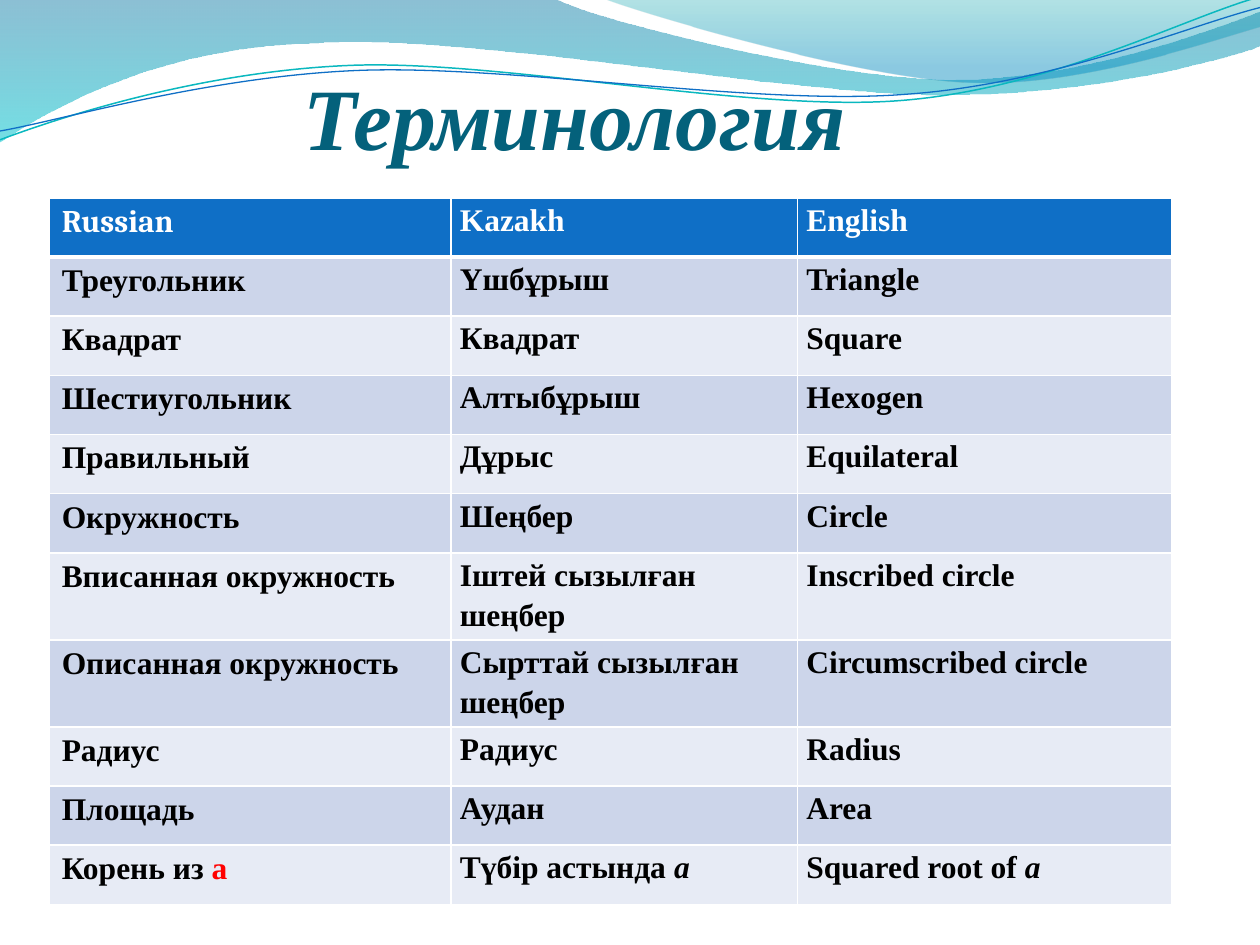
from dataclasses import dataclass

from lxml import etree
from pptx import Presentation
from pptx.dml.color import RGBColor
from pptx.enum import text
from pptx.oxml.ns import qn
from pptx.util import Inches, Pt


@dataclass(frozen=True)
class Theme:
    font: str = "Times New Roman"
    heading_font: str = "Cambria"
    title_size: int = 50
    table_size: int = 18
    title: str = "04617B"
    header: str = "0F6FC6"
    bands: tuple = ("CCD5EA", "E7EBF5")
    white: str = "FFFFFF"
    black: str = "000000"
    red: str = "FF0000"
    teal_line: str = "0AB8BF"
    # Gradient stops: position, colour, opacity in percent
    wide_wave: tuple = ((0, "0074A1", 45), (1, "00C6CF", 55))
    right_wave: tuple = ((0, "00A1A9", 30), (0.8, "008BBF", 45))


THEME = Theme()

# Each path is a start point followed by lines (2 numbers) and Bézier curves (6).
WIDE_WAVE = [
    (0, 0), (4.4, -0.01), (4.76, 0.17, 6.64, 0.63, 7.58, 0.63),
    (8.53, 0.63, 9.58, 0.26, 10, 0.09), (10.01, 0.36),
    (9.83, 0.44, 8.7, 0.76, 7.46, 0.75), (6.22, 0.75, 3.82, 0.28, 2.57, 0.34),
    (1.29, 0.36, 0.46, 0.83, -0.01, 1.13), (0, 0),
]
RIGHT_WAVE = [
    (4.79, -0.01), (5.09, 0.11, 6.82, 0.62, 7.69, 0.65),
    (8.56, 0.69, 9.61, 0.32, 10, 0.21), (10, 0), (4.79, -0.01),
]
TEAL_CURVE = [
    (0, 1.11), (0.48, 0.93, 1.58, 0.57, 2.77, 0.52),
    (3.95, 0.47, 5.93, 0.89, 7.13, 0.8), (8.33, 0.71, 9.38, 0.15, 9.98, -0.02),
]
BLUE_CURVE = [
    (0, 1.04), (0.47, 0.96, 1.64, 0.61, 2.83, 0.56),
    (4.03, 0.51, 5.97, 0.84, 7.17, 0.75), (8.36, 0.67, 9.41, 0.21, 10, 0.06),
]

COLUMN_WIDTHS = (3.19, 2.75, 2.97)
ROW_HEIGHT = 0.47
# A nested tuple holds a phrase and the symbol that ends it.
TERMS = [
    ("Russian", "Kazakh", "English"),
    ("Треугольник", "Үшбұрыш", "Triangle"),
    ("Квадрат", "Квадрат", "Square"),
    ("Шестиугольник", "Алтыбұрыш", "Hexogen"),
    ("Правильный", "Дұрыс", "Equilateral"),
    ("Окружность", "Шеңбер", "Circle"),
    ("Вписанная окружность", "Іштей сызылған шеңбер", "Inscribed circle"),
    ("Описанная окружность", "Сырттай сызылған шеңбер", "Circumscribed circle"),
    ("Радиус", "Радиус", "Radius"),
    ("Площадь", "Аудан", "Area"),
    (("Корень из ", "а"), ("Түбір астында ", "а"), ("Squared root of ", "a")),
]


def rgb(value):
    return RGBColor.from_string(value)


def add_path(s, segments, close):
    """Build the path through its nodes, then bend the curved segments."""
    nodes = [(Inches(seg[-2]), Inches(seg[-1])) for seg in segments]
    builder = s.shapes.build_freeform(*nodes[0])
    builder.add_line_segments(nodes[1:], close=close)
    sp = builder.convert_to_shape()
    sp.shadow.inherit = False
    lines = list(sp._element.iter(qn("a:lnTo")))
    for line, segment in zip(lines, segments[1:]):
        if len(segment) == 6:
            curve = etree.Element(qn("a:cubicBezTo"))
            for x, y in zip(segment[::2], segment[1::2]):
                etree.SubElement(curve, qn("a:pt"), x=str(Inches(x) - sp.left),
                                 y=str(Inches(y) - sp.top))
            line.getparent().replace(line, curve)
    return sp


def add_wave(s, segments, stops):
    sp = add_path(s, segments, close=True)
    sp.line.fill.background()
    sp.fill.gradient()
    sp.fill.gradient_angle = 270
    for stop, (position, color, _) in zip(sp.fill.gradient_stops, stops):
        stop.position = position
        stop.color.rgb = rgb(color)
    colors = sp._element.spPr.iter(qn("a:srgbClr"))
    for node, (_, _, opacity) in zip(colors, stops):
        etree.SubElement(node, qn("a:alpha"), val=str(opacity * 1000))


def add_curve(s, segments, color, width):
    sp = add_path(s, segments, close=False)
    sp.fill.background()
    sp.line.color.rgb = rgb(color)
    sp.line.width = Pt(width)


def style_font(font, name, size, color):
    font.name = name
    font.size = Pt(size)
    font.bold = True
    font.color.rgb = rgb(color)


def add_title(s, title):
    tf = s.shapes.add_textbox(Inches(0.5), Inches(0.31), Inches(9), Inches(1.02)).text_frame
    tf.word_wrap = True
    tf.vertical_anchor = text.MSO_ANCHOR.BOTTOM
    tf.margin_left = Inches(1.91)
    tf.margin_right = tf.margin_bottom = 0
    p = tf.paragraphs[0]
    p.text = title
    style_font(p.font, THEME.font, THEME.title_size, THEME.title)
    p.font.italic = True


def set_borders(cell, row):
    widths = {"L": 1, "R": 1, "T": 3 if row == 1 else 1, "B": 3 if row == 0 else 1}
    for side, width in widths.items():
        line = etree.SubElement(cell._tc.get_or_add_tcPr(), qn(f"a:ln{side}"),
                                w=str(Pt(width)))
        fill = etree.SubElement(line, qn("a:solidFill"))
        etree.SubElement(fill, qn("a:srgbClr"), val=THEME.white)


def fill_cell(cell, row, column, content):
    set_borders(cell, row)
    cell.fill.solid()
    cell.fill.fore_color.rgb = rgb(THEME.bands[(row - 1) % 2] if row else THEME.header)
    p = cell.text_frame.paragraphs[0]
    p.space_before = p.space_after = Pt(0)
    if column:
        cell.margin_left = cell.margin_right = Inches(0.07)
        cell.margin_top = cell.margin_bottom = 0
        p.line_spacing = 1.15
    name = THEME.heading_font if row == column == 0 else THEME.font
    style_font(p.font, name, THEME.table_size, THEME.black if row else THEME.white)
    if isinstance(content, str):
        p.text = content
        return
    for part in content:
        r = p.add_run()
        r.text = part
    if column:
        r.font.italic = True
    else:
        r.font.color.rgb = rgb(THEME.red)


def add_terms(s):
    table = s.shapes.add_table(len(TERMS), len(COLUMN_WIDTHS), Inches(0.39), Inches(1.57),
                               Inches(sum(COLUMN_WIDTHS)),
                               Inches(ROW_HEIGHT * len(TERMS))).table
    for column, width in zip(table.columns, COLUMN_WIDTHS):
        column.width = Inches(width)
    for row in table.rows:
        row.height = Inches(ROW_HEIGHT)
    for i, terms in enumerate(TERMS):
        for j, content in enumerate(terms):
            fill_cell(table.cell(i, j), i, j, content)


def main():
    prs = Presentation()
    prs.slide_width, prs.slide_height = Inches(10), Inches(7.5)
    s = prs.slides.add_slide(prs.slide_layouts[6])
    add_wave(s, WIDE_WAVE, THEME.wide_wave)
    add_wave(s, RIGHT_WAVE, THEME.right_wave)
    add_curve(s, TEAL_CURVE, THEME.teal_line, 0.85)
    add_curve(s, BLUE_CURVE, THEME.header, 0.75)
    add_title(s, "Терминология")
    add_terms(s)
    prs.save("out.pptx")


if __name__ == "__main__":
    main()
